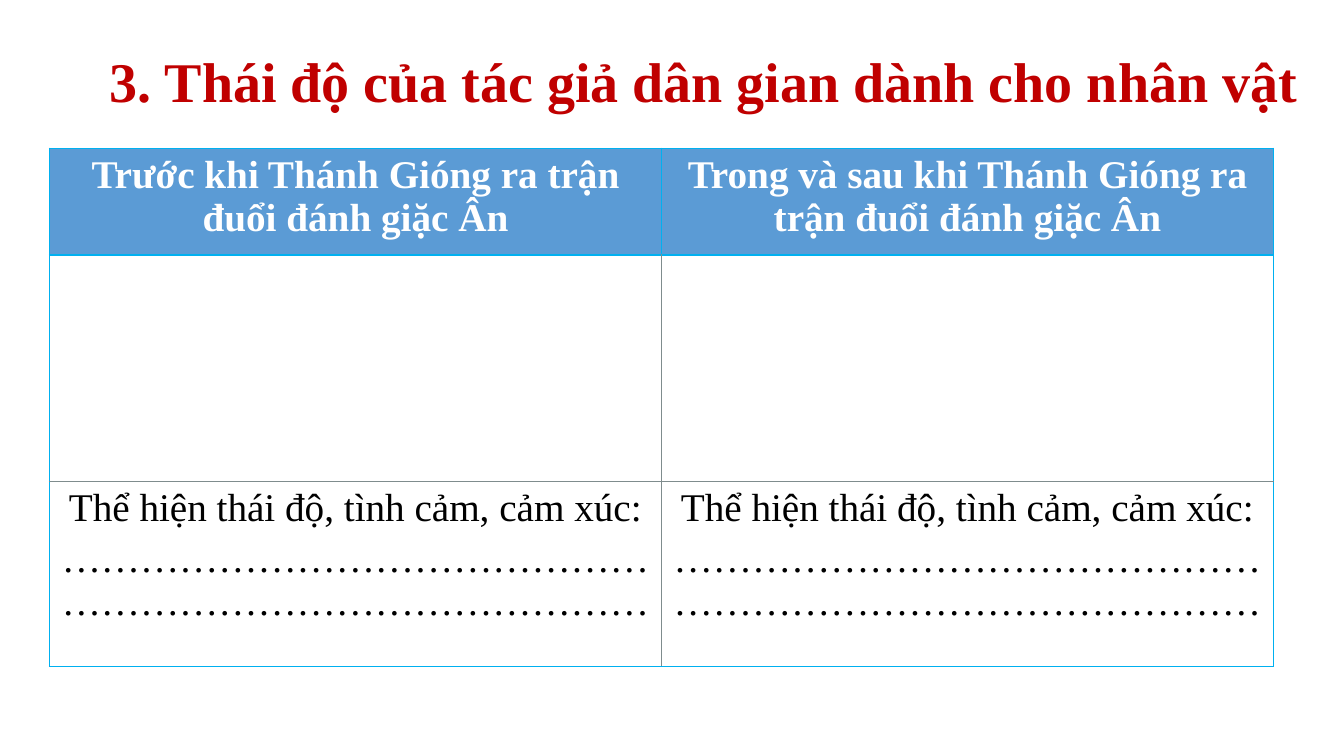
import pptx
import pptx.util
import pptx.dml.color
import pptx.enum.text
import pptx.oxml
import pptx.oxml.ns
from pptx.util import Inches

FONT = "Times New Roman"
BLUE, GREY = "00B0F0", "7F8C8D"
HEADERS = ["Trước khi Thánh Gióng ra trận đuổi đánh giặc Ân",
           "Trong và sau khi Thánh Gióng ra trận đuổi đánh giặc Ân"]
PROMPT = "Thể hiện thái độ, tình cảm, cảm xúc:"
DOTS = "…" * 30


def rgb(value):
    """Return the colour for a hex string."""
    return pptx.dml.color.RGBColor.from_string(value)


def style(p, size, color, bold):
    """Format every run of a paragraph."""
    for r in p.runs:
        r.font.name = FONT
        r.font.size = pptx.util.Pt(size)
        r.font.bold = bold
        r.font.color.rgb = rgb(color)


def set_borders(cell, colors):
    """Draw one-point cell borders from a side-to-colour mapping."""
    tc_pr = cell._tc.get_or_add_tcPr()
    for i, (side, color) in enumerate(colors.items()):
        tc_pr.insert(i, pptx.oxml.parse_xml(
            f'<a:{side} {pptx.oxml.ns.nsdecls("a")} w="12700"><a:solidFill>'
            f'<a:srgbClr val="{color}"/></a:solidFill></a:{side}>'))


def add_title(s, left, top, width, height):
    """Place and format the slide title."""
    title = s.shapes.title
    title.left, title.top = Inches(left), Inches(top)
    title.width, title.height = Inches(width), Inches(height)
    tf = title.text_frame
    tf.text = "3. Thái độ của tác giả dân gian dành cho nhân vật"
    tf.word_wrap = True
    tf.vertical_anchor = pptx.enum.text.MSO_ANCHOR.MIDDLE
    p = tf.paragraphs[0]
    p.alignment = pptx.enum.text.PP_ALIGN.LEFT
    p.line_spacing = 0.9
    style(p, 40, "C00000", True)


def add_attitude_table(s, left, top, width, row_heights):
    """Build the two-column worksheet table."""
    rows = [HEADERS, ["", ""], [f"{PROMPT}\n{DOTS}"] * 2]
    table = s.shapes.add_table(len(rows), 2, Inches(left), Inches(top),
                               Inches(width), Inches(sum(row_heights))).table
    for i, (texts, height) in enumerate(zip(rows, row_heights)):
        table.rows[i].height = Inches(height)
        for j, text in enumerate(texts):
            cell = table.cell(i, j)
            cell.text_frame.text = text
            cell.fill.solid()
            cell.fill.fore_color.rgb = rgb("5B9BD5" if i == 0 else "FFFFFF")
            for k, p in enumerate(cell.text_frame.paragraphs):
                p.alignment = pptx.enum.text.PP_ALIGN.CENTER
                p.space_before = pptx.util.Pt(5 * k)
                style(p, 28, "FFFFFF" if i == 0 else "000000", i == 0)
            inner = BLUE if i == 0 else GREY
            set_borders(cell, {"lnL": BLUE if j == 0 else inner,
                               "lnR": BLUE if j == 1 else inner,
                               "lnT": GREY if i == 2 else BLUE,
                               "lnB": GREY if i == 1 else BLUE})


def main():
    """Build and save the slide."""
    prs = pptx.Presentation()
    prs.slide_width, prs.slide_height = Inches(13.33), Inches(7.5)
    s = prs.slides.add_slide(prs.slide_layouts[5])
    add_title(s, 0.99, 0.11, 12.01, 1.45)
    add_attitude_table(s, 0.49, 1.47, 12.14, [1.06, 2.25, 1.83])
    prs.save("out.pptx")


if __name__ == "__main__":
    main()
